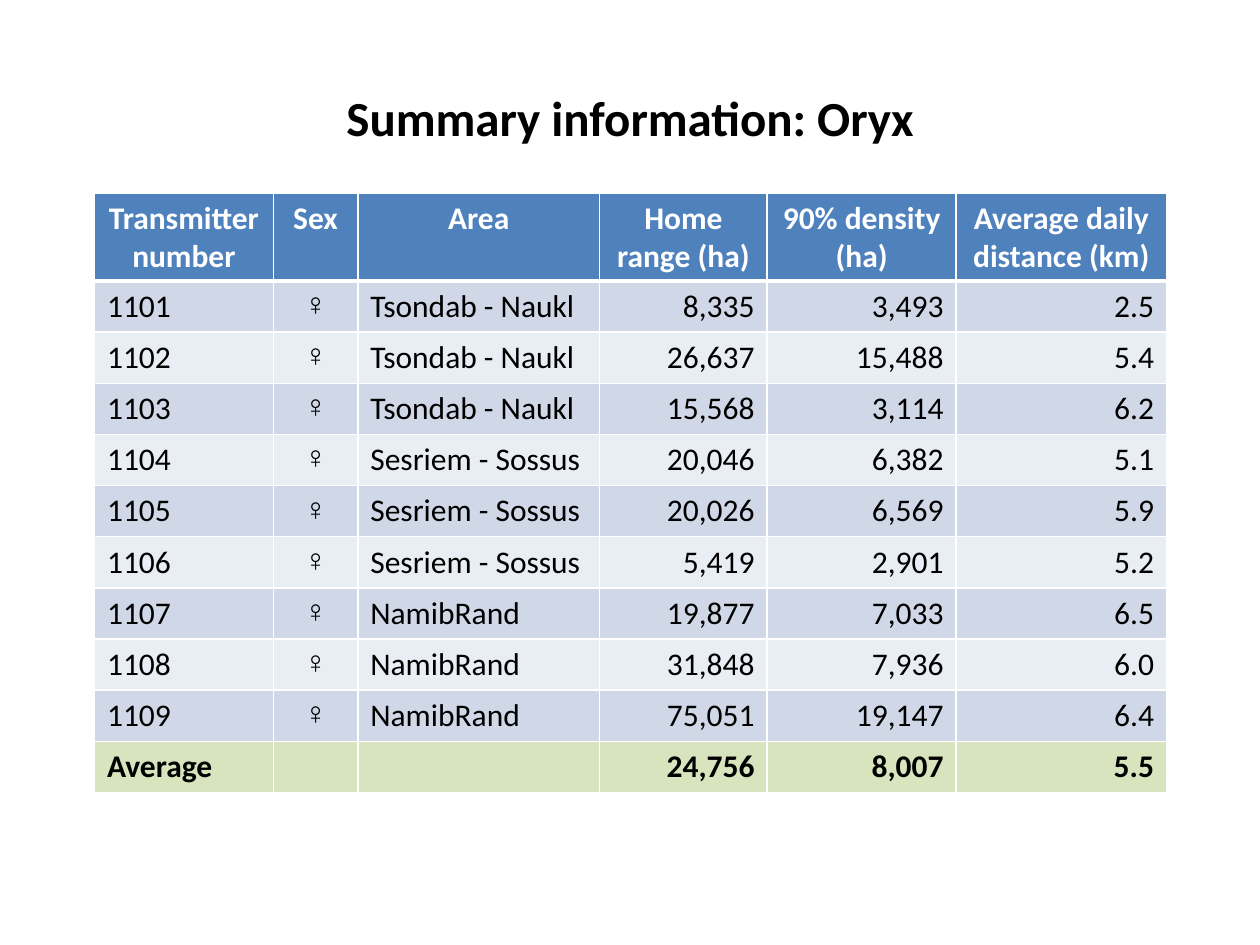
"""Build a slide with a summary table of oryx home ranges."""
from lxml import etree
from pptx import Presentation
from pptx.dml.color import RGBColor
from pptx.enum.text import MSO_ANCHOR, PP_ALIGN
from pptx.oxml.ns import qn
from pptx.util import Inches, Pt

LEFT, CENTER, RIGHT = PP_ALIGN.LEFT, PP_ALIGN.CENTER, PP_ALIGN.RIGHT
MIDDLE = MSO_ANCHOR.MIDDLE

TITLE = "Summary information: Oryx"
HEADERS = ["Transmitter number", "Sex", "Area", "Home range (ha)",
           "90% density (ha)", "Average daily distance (km)"]
ANIMALS = [
    ("1101", "♀", "Tsondab - Naukl", "8,335", "3,493", "2.5"),
    ("1102", "♀", "Tsondab - Naukl", "26,637", "15,488", "5.4"),
    ("1103", "♀", "Tsondab - Naukl", "15,568", "3,114", "6.2"),
    ("1104", "♀", "Sesriem - Sossus", "20,046", "6,382", "5.1"),
    ("1105", "♀", "Sesriem - Sossus", "20,026", "6,569", "5.9"),
    ("1106", "♀", "Sesriem - Sossus", "5,419", "2,901", "5.2"),
    ("1107", "♀", "NamibRand", "19,877", "7,033", "6.5"),
    ("1108", "♀", "NamibRand", "31,848", "7,936", "6.0"),
    ("1109", "♀", "NamibRand", "75,051", "19,147", "6.4"),
]
AVERAGES = ("Average", "", "", "24,756", "8,007", "5.5")

COLUMN_WIDTHS = [1.42, 0.67, 1.92, 1.33, 1.5, 1.67]
COLUMN_ALIGNMENTS = [LEFT, CENTER, LEFT, RIGHT, RIGHT, RIGHT]
SEX_COLUMN = 1
TABLE_LEFT, TABLE_TOP, TABLE_WIDTH, TABLE_HEIGHT = 0.75, 1.53, 8.5, 4.76
HEADER_HEIGHT = 0.7
COLORS = {"header": "4F81BD", "odd": "D0D8E8", "even": "E9EDF4",
          "average": "D7E4BD", "text": "000000", "white": "FFFFFF"}


def add_text(paragraph, text, size, color, bold, alignment, font="Calibri"):
    paragraph.alignment = alignment
    run = paragraph.add_run()
    run.text = text
    run.font.name = font
    run.font.size = Pt(size)
    run.font.bold = bold
    run.font.color.rgb = RGBColor.from_string(COLORS[color])


def set_borders(cell, top, bottom):
    properties = cell._tc.get_or_add_tcPr()
    widths = {"a:lnL": 1, "a:lnR": 1, "a:lnT": top, "a:lnB": bottom}
    for position, (tag, width) in enumerate(widths.items()):
        line = etree.Element(qn(tag), w=str(Pt(width)))
        fill = etree.SubElement(line, qn("a:solidFill"))
        etree.SubElement(fill, qn("a:srgbClr"), val=COLORS["white"])
        properties.insert(position, line)


def add_title(slide):
    shape = slide.shapes.add_textbox(Inches(0.5), Inches(0.3), Inches(9), Inches(1.25))
    frame = shape.text_frame
    frame.word_wrap = True
    frame.vertical_anchor = MIDDLE
    add_text(frame.paragraphs[0], TITLE, 28, "text", True, CENTER)


def add_summary_table(slide):
    rows = [HEADERS, *ANIMALS, AVERAGES]
    last = len(rows) - 1
    table = slide.shapes.add_table(
        len(rows), len(HEADERS), Inches(TABLE_LEFT), Inches(TABLE_TOP),
        Inches(TABLE_WIDTH), Inches(TABLE_HEIGHT)).table
    for column, width in zip(table.columns, COLUMN_WIDTHS):
        column.width = Inches(width)
    body_height = (TABLE_HEIGHT - HEADER_HEIGHT) / last

    for row_index, values in enumerate(rows):
        is_header, is_average = row_index == 0, row_index == last
        table.rows[row_index].height = Inches(HEADER_HEIGHT if is_header else body_height)
        if is_header:
            fill = "header"
        elif is_average:
            fill = "average"
        else:
            fill = "odd" if row_index % 2 else "even"
        for column_index, value in enumerate(values):
            cell = table.cell(row_index, column_index)
            cell.fill.solid()
            cell.fill.fore_color.rgb = RGBColor.from_string(COLORS[fill])
            set_borders(cell, 3 if row_index == 1 else 1, 3 if is_header else 1)
            if not value:
                continue
            is_symbol = column_index == SEX_COLUMN and not is_header
            add_text(cell.text_frame.paragraphs[0], value, 18,
                     "white" if is_header else "text",
                     is_header or is_average or is_symbol,
                     CENTER if is_header else COLUMN_ALIGNMENTS[column_index],
                     "Times New Roman" if is_symbol else "Calibri")


def main():
    presentation = Presentation()
    presentation.slide_width = Inches(10)
    presentation.slide_height = Inches(7.5)
    slide = presentation.slides.add_slide(presentation.slide_layouts[6])
    add_title(slide)
    add_summary_table(slide)
    presentation.save("out.pptx")


if __name__ == "__main__":
    main()
